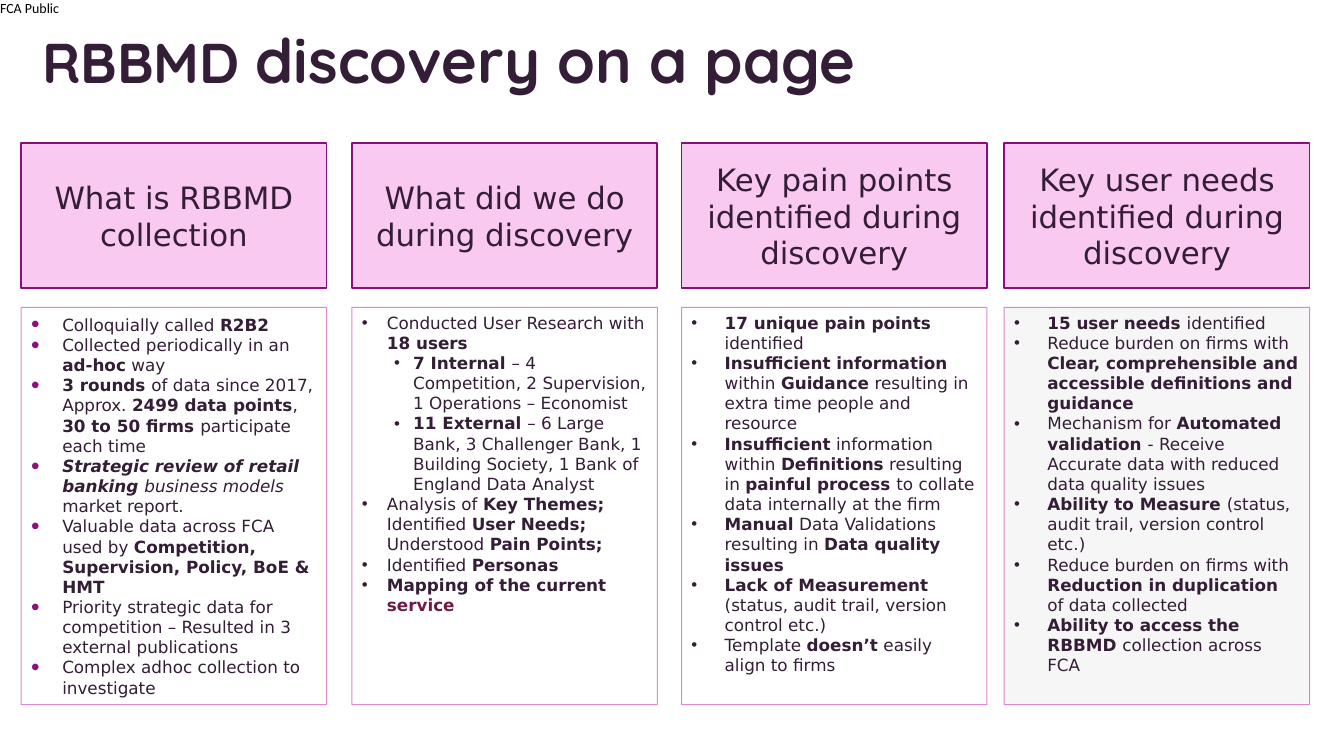
from dataclasses import dataclass
from typing import Iterator, Optional

from lxml.etree import SubElement
from pptx import Presentation
from pptx.dml.color import RGBColor
from pptx.enum.shapes import MSO_SHAPE as Preset
from pptx.enum.text import MSO_ANCHOR as Anchor, PP_ALIGN as Align
from pptx.oxml.ns import qn
from pptx.util import Inches, Pt

PLUM = RGBColor(0x34, 0x1D, 0x36)
BERRY = RGBColor(0x8A, 0x10, 0x79)
BULLET_PURPLE = RGBColor(0x8C, 0x11, 0x7A)
MAGENTA = RGBColor(0xBB, 0x16, 0xA3)
PINK = RGBColor(0xF9, 0xC9, 0xF2)
WINE = RGBColor(0x70, 0x1B, 0x45)
PALE_GREY = RGBColor(0xF6, 0xF6, 0xF6)
BLACK = RGBColor(0, 0, 0)

BODY_FONT = "DejaVu Sans"
COLUMN_WIDTH = 3.03
HEADING_TOP, HEADING_HEIGHT = 1.42, 1.44
PANEL_TOP, PANEL_HEIGHT = 3.05, 3.94
SUB_MARK = "> "


@dataclass
class Column:
    """Marks in items: *bold*, _italic_, ^accent^ and a leading "> " for level two."""
    left: float
    heading: str
    items: list[str]
    indent: float
    fill: Optional[RGBColor] = None
    anchor: Anchor = Anchor.TOP
    bullet_color: Optional[RGBColor] = None
    bullet_percent: int = 100


COLUMNS = [
    Column(0.21, "What is RBBMD collection", [
        "Colloquially called *R2B2*",
        "Collected periodically in an *ad-hoc* way",
        "*3 rounds *of data since 2017, Approx. *2499 data points*, "
        "*30 to 50 firms *participate each time",
        "*_Strategic review of retail banking _*_business models _market report.",
        "Valuable data across FCA used by *Competition, Supervision, Policy, BoE & HMT*",
        "Priority strategic data for competition – Resulted in 3 external publications",
        "Complex adhoc collection to investigate",
    ], 0.31, anchor=Anchor.MIDDLE, bullet_color=BULLET_PURPLE, bullet_percent=145),
    Column(3.49, "What did we do during discovery", [
        "Conducted User Research with *18 users*",
        "> *7 Internal *– 4 Competition, 2 Supervision, 1 Operations – Economist",
        "> *11 External *– 6 Large Bank, 3 Challenger Bank, 1 Building Society, "
        "1 Bank of England Data Analyst",
        "Analysis of *Key Themes; *Identified *User Needs; *Understood *Pain Points;*",
        "Identified *Personas*",
        "*Mapping of the current ^service^*",
    ], 0.25),
    Column(6.76, "Key pain points identified during discovery", [
        "*17 unique pain points *identified",
        "*Insufficient information* within *Guidance* resulting in extra time "
        "people and resource",
        "*Insufficient* information within *Definitions* resulting in "
        "*painful process *to collate data internally at the firm",
        "*Manual* Data Validations resulting in *Data quality issues*",
        "*Lack of Measurement *(status, audit trail, version control etc.)",
        "Template *doesn’t* easily align to firms",
    ], 0.33),
    Column(9.96, "Key user needs identified during discovery", [
        "*15 user needs *identified",
        "Reduce burden on firms with *Clear, comprehensible and accessible "
        "definitions and guidance*",
        "Mechanism for *Automated validation *- Receive Accurate data with "
        "reduced data quality issues",
        "*Ability to Measure *(status, audit trail, version control etc.)",
        "Reduce burden on firms with *Reduction in duplication *of data collected",
        "*Ability to access the RBBMD *collection across FCA",
    ], 0.33, fill=PALE_GREY),
]


def add_span(para, text: str, *, size: float, font: str = BODY_FONT,
             color: RGBColor = PLUM, bold: bool = False, italic: bool = False) -> None:
    span = para.add_run()
    span.text = text
    span.font.size = Pt(size)
    span.font.name = font
    span.font.color.rgb = color
    span.font.bold = bold
    span.font.italic = italic


def styled_parts(text: str) -> Iterator[tuple[str, bool, bool, RGBColor]]:
    """Split marked text into pieces with their bold, italic and colour."""
    for b, bold_part in enumerate(text.split("*")):
        for i, italic_part in enumerate(bold_part.split("_")):
            for a, piece in enumerate(italic_part.split("^")):
                if piece:
                    yield piece, b % 2 == 1, i % 2 == 1, WINE if a % 2 else PLUM


def set_bullet(para, margin: float, hanging: float, color: Optional[RGBColor],
               percent: int) -> None:
    properties = para._p.get_or_add_pPr()
    properties.set("marL", str(Inches(margin)))
    properties.set("indent", str(-Inches(hanging)))
    if color is not None:
        SubElement(SubElement(properties, qn("a:buClr")), qn("a:srgbClr"), val=str(color))
    SubElement(properties, qn("a:buSzPct"), val=str(percent * 1000))
    SubElement(properties, qn("a:buFont"), typeface="Arial")
    SubElement(properties, qn("a:buChar"), char="•")


def add_box(page, left: float, top: float, height: float, *, fill: Optional[RGBColor],
            line: RGBColor, line_width: float, anchor: Anchor):
    box = page.shapes.add_shape(Preset.RECTANGLE, Inches(left), Inches(top),
                                Inches(COLUMN_WIDTH), Inches(height))
    box.shadow.inherit = False
    if fill is None:
        box.fill.background()
    else:
        box.fill.solid()
        box.fill.fore_color.rgb = fill
    box.line.color.rgb = line
    box.line.width = Pt(line_width)
    box.text_frame.word_wrap = True
    box.text_frame.vertical_anchor = anchor
    return box


def add_column(page, column: Column) -> None:
    heading = add_box(page, column.left, HEADING_TOP, HEADING_HEIGHT, fill=PINK,
                      line=BERRY, line_width=1.25, anchor=Anchor.MIDDLE)
    para = heading.text_frame.paragraphs[0]
    para.alignment = Align.CENTER
    add_span(para, column.heading, size=22)

    panel = add_box(page, column.left, PANEL_TOP, PANEL_HEIGHT, fill=column.fill,
                    line=MAGENTA, line_width=0.75, anchor=column.anchor)
    line_color = panel.line._ln.find(".//" + qn("a:srgbClr"))
    SubElement(line_color, qn("a:alpha"), val="50000")
    frame = panel.text_frame
    for index, item in enumerate(column.items):
        para = frame.add_paragraph() if index else frame.paragraphs[0]
        para.alignment = Align.LEFT
        is_sub = item.startswith(SUB_MARK)
        para.level = int(is_sub)
        margin, hanging = (0.51, 0.19) if is_sub else (column.indent, column.indent)
        set_bullet(para, margin, hanging, column.bullet_color, column.bullet_percent)
        for text, bold, italic, color in styled_parts(item.removeprefix(SUB_MARK)):
            add_span(para, text, size=12, bold=bold, italic=italic, color=color)


def add_title(page) -> None:
    box = page.shapes.add_textbox(Inches(0.32), Inches(0), Inches(11.24), Inches(1.16))
    box.text_frame.word_wrap = True
    box.text_frame.vertical_anchor = Anchor.MIDDLE
    para = box.text_frame.paragraphs[0]
    add_span(para, "RBBMD ", size=40, font="Quicksand", bold=True)
    add_span(para, "discovery on a page", size=44, font="Quicksand", bold=True)


def add_classification(page) -> None:
    box = page.shapes.add_textbox(Inches(0), Inches(0), Inches(0.62), Inches(0.17))
    frame = box.text_frame
    frame.margin_left = frame.margin_right = frame.margin_top = frame.margin_bottom = 0
    frame.word_wrap = False
    add_span(frame.paragraphs[0], "FCA Public", size=10, font="Calibri", color=BLACK)


def main() -> None:
    deck = Presentation()
    deck.slide_width, deck.slide_height = Inches(13.33), Inches(7.5)
    page = deck.slides.add_slide(deck.slide_layouts[6])
    add_classification(page)
    add_title(page)
    for column in COLUMNS:
        add_column(page, column)
    deck.save("out.pptx")


if __name__ == "__main__":
    main()
